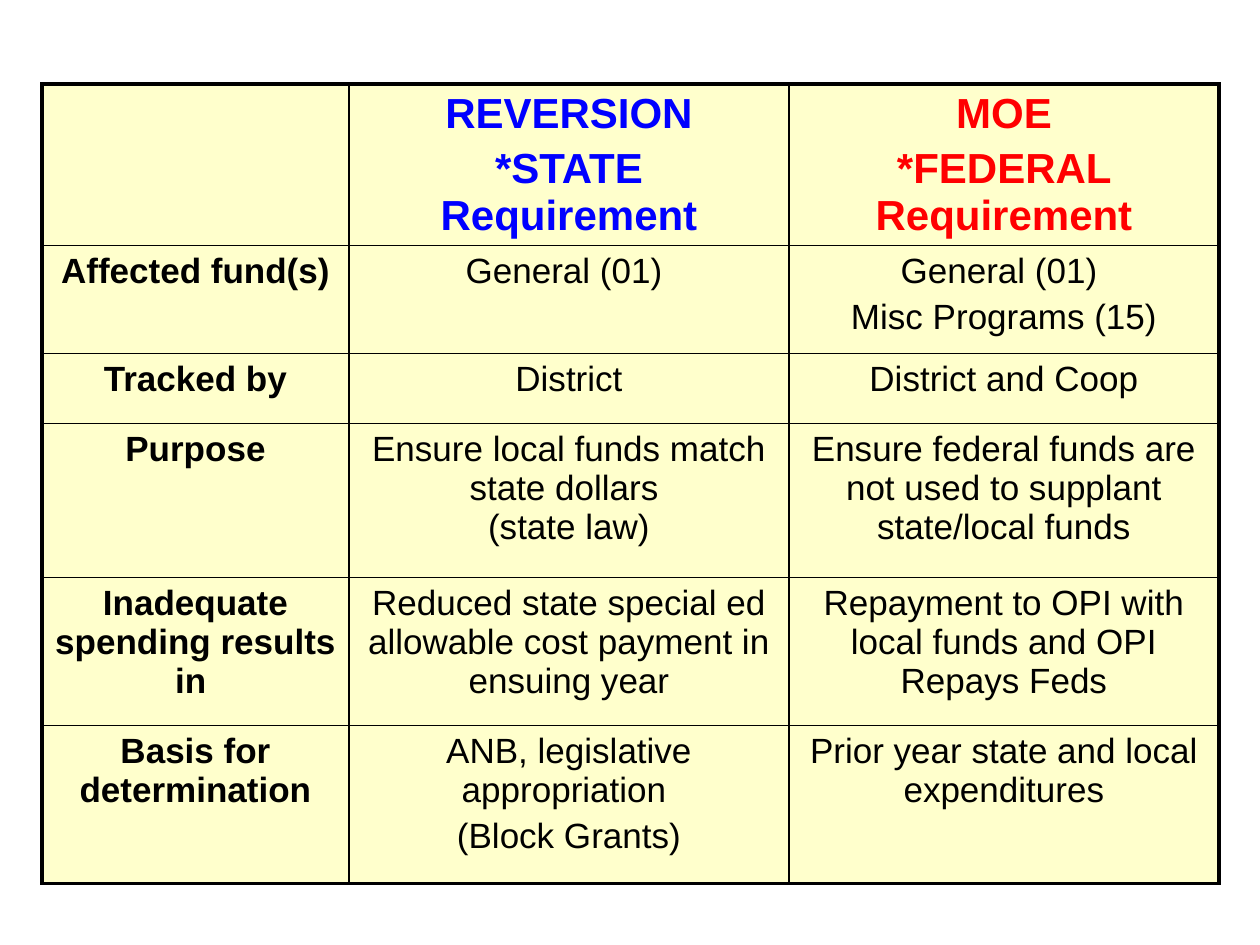
from lxml import etree
from pptx import Presentation
from pptx.dml.color import RGBColor
from pptx.enum.text import PP_ALIGN
from pptx.oxml.ns import qn
from pptx.util import Pt

PX = 914400 / 126
CENTER = PP_ALIGN.CENTER
BLACK = RGBColor(0, 0, 0)
BLUE = RGBColor(0, 0, 255)
RED = RGBColor(255, 0, 0)
CREAM = RGBColor(255, 255, 204)
OUTER, INNER = Pt(2.25), Pt(1)

COL_WIDTHS = [307, 440, 430]
ROW_HEIGHTS = [161, 108, 70, 154, 148, 158]
HEADER_COLORS = [BLACK, BLUE, RED]
# "\n" starts a spaced paragraph, "\v" a line without extra space.
ROWS = [
    ["", "REVERSION\n*STATE Requirement", "MOE\n*FEDERAL Requirement"],
    ["Affected fund(s)", "General (01) ", "General (01) \nMisc Programs (15)"],
    ["Tracked by", "District", "District and Coop"],
    ["Purpose", "Ensure local funds match state dollars \v(state law)",
     "Ensure federal funds are not used to supplant state/local funds"],
    ["Inadequate spending results in ",
     "Reduced state special ed allowable cost payment in ensuing year",
     "Repayment to OPI with local funds and OPI Repays Feds"],
    ["Basis for determination",
     "ANB, legislative appropriation \n(Block Grants)",
     "Prior year state and local expenditures"],
]


def px(n):
    return round(n * PX)


def set_borders(cell, widths):
    tc_pr = cell._tc.get_or_add_tcPr()
    for side, width in widths.items():
        ln = etree.SubElement(tc_pr, qn("a:ln" + side), w=str(int(width)))
        fill = etree.SubElement(ln, qn("a:solidFill"))
        etree.SubElement(fill, qn("a:srgbClr"), val=str(BLACK))


prs = Presentation()
prs.slide_width, prs.slide_height = px(1260), px(945)
s = prs.slides.add_slide(prs.slide_layouts[6])

n_rows, n_cols = len(ROWS), len(COL_WIDTHS)
table = s.shapes.add_table(n_rows, n_cols, px(42), px(84),
                           px(sum(COL_WIDTHS)), px(sum(ROW_HEIGHTS))).table
for column, width in zip(table.columns, COL_WIDTHS):
    column.width = px(width)
for row, height in zip(table.rows, ROW_HEIGHTS):
    row.height = px(height)

for i, texts in enumerate(ROWS):
    for j, text in enumerate(texts):
        cell = table.cell(i, j)
        set_borders(cell, {
            "L": OUTER if j == 0 else INNER,
            "R": OUTER if j == n_cols - 1 else INNER,
            "T": OUTER if i == 0 else INNER,
            "B": OUTER if i == n_rows - 1 else INNER,
        })
        cell.fill.solid()
        cell.fill.fore_color.rgb = CREAM

        size = 24 if i == 0 else 20
        font_format = {"name": "Arial", "size": Pt(size), "bold": i == 0 or j == 0}
        tf = cell.text_frame
        tf.text = text
        for k, p in enumerate(tf.paragraphs):
            p.alignment = CENTER
            p.space_before = Pt(size * 0.2 if k else 0)
            for r in p.runs:
                for name, value in font_format.items():
                    setattr(r.font, name, value)
                r.font.color.rgb = HEADER_COLORS[j] if i == 0 else BLACK

prs.save("out.pptx")
